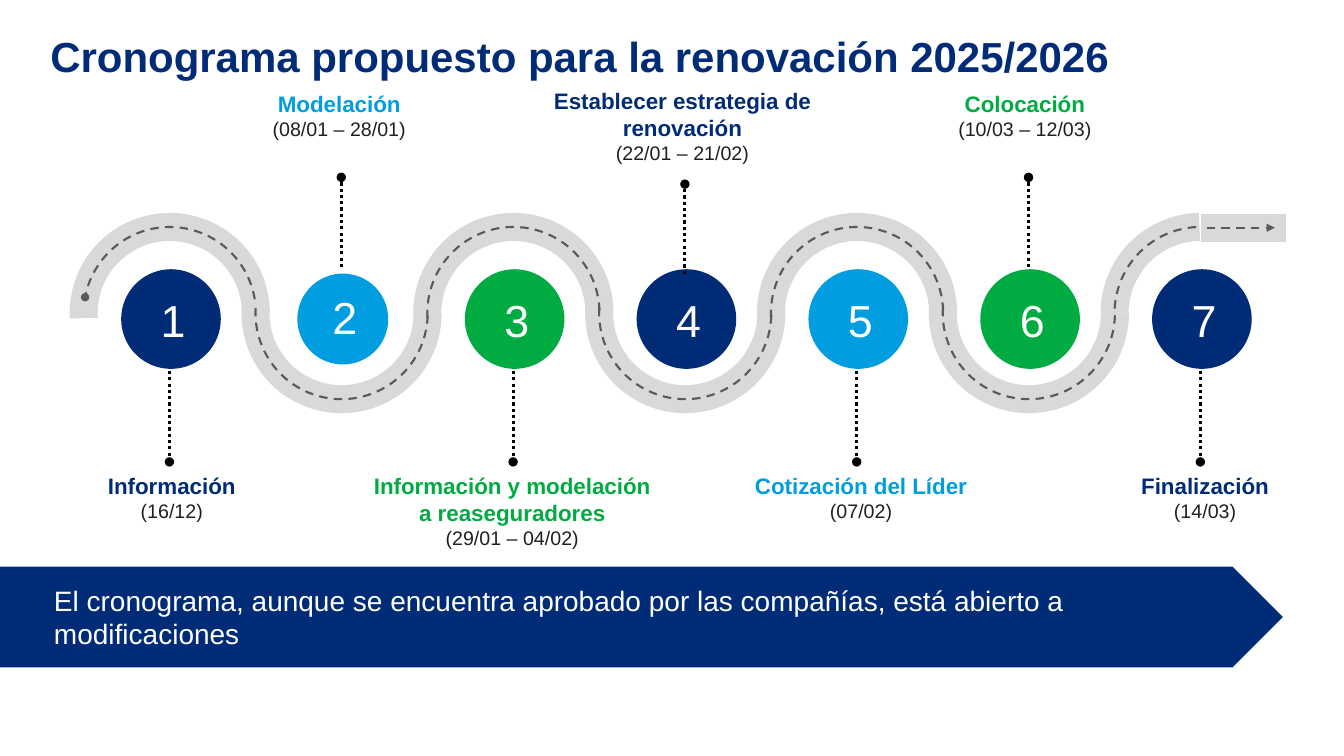
from dataclasses import dataclass

import pptx
import pptx.dml.color
import pptx.enum.dml
import pptx.enum.shapes
import pptx.enum.text
import pptx.oxml
import pptx.oxml.ns
import pptx.util

Cm = pptx.util.Cm
Pt = pptx.util.Pt
SHAPE = pptx.enum.shapes.MSO_SHAPE
DASH = pptx.enum.dml.MSO_LINE
ALIGN = pptx.enum.text.PP_ALIGN


@dataclass(frozen=True)
class Theme:
    font: str = "Arial"
    navy: str = "002C77"
    blue: str = "009DE0"
    green: str = "00AC41"
    ink: str = "202020"
    black: str = "000000"
    white: str = "FFFFFF"
    road: str = "D9D9D9"
    lane: str = "595959"
    title: int = 30
    number: int = 32
    banner: int = 20
    step: int = 16
    date: int = 14


T = Theme()
PITCH = 4.33     # distance between neighbouring steps
NODE = 2.51      # diameter of a numbered circle
INSETS = (0.25, 0.13, 0.25, 0.13)

# name, dates, colour, label width, label shift, circle diameter, downward shift
STEPS = [
    ("Información", "(16/12)", T.navy, 6.22, 0.02, NODE, 0),
    ("Modelación", "(08/01 – 28/01)", T.blue, 7.77, -0.09, 2.29, 0),
    ("Información y modelación a reaseguradores", "(29/01 – 04/02)",
     T.green, 7.67, -0.06, NODE, 0),
    ("Establecer estrategia de renovación", "(22/01 – 21/02)",
     T.navy, 7.77, -0.1, NODE, 0.17),
    ("Cotización del Líder", "(07/02)", T.blue, 6.83, 0.07, NODE, 0),
    ("Colocación", "(10/03 – 12/03)", T.green, 7.77, -0.13, NODE, 0),
    ("Finalización", "(14/03)", T.navy, 6.83, 0.08, NODE, 0),
]


def rgb(color):
    return pptx.dml.color.RGBColor.from_string(color)


def add_text(slide, box, lines, align=ALIGN.CENTER, insets=INSETS,
             spacing=None, wrap=True):
    """Write lines of (text, size, colour, bold), one paragraph each."""
    tf = slide.shapes.add_textbox(*map(Cm, box)).text_frame
    tf.word_wrap = wrap
    tf.margin_left, tf.margin_top, tf.margin_right, tf.margin_bottom = map(Cm, insets)
    for i, (text, size, color, bold) in enumerate(lines):
        p = tf.add_paragraph() if i else tf.paragraphs[0]
        p.alignment = align
        if spacing:
            p.line_spacing = spacing
        r = p.add_run()
        r.text = text
        r.font.name, r.font.size, r.font.bold = T.font, Pt(size), bold
        r.font.color.rgb = rgb(color)


def add_solid(slide, kind, box, color):
    sp = slide.shapes.add_shape(kind, *map(Cm, box))
    sp.shadow.inherit = False
    sp.fill.solid()
    sp.fill.fore_color.rgb = rgb(color)
    sp.line.fill.background()


def style_line(sp, color, width, dash=None, tail=None):
    sp.line.color.rgb = rgb(color)
    sp.line.width = Pt(width)
    if dash:
        sp.line.dash_style = dash
    if tail:
        end = pptx.oxml.parse_xml(
            f'<a:tailEnd {pptx.oxml.ns.nsdecls("a")} type="{tail}"/>')
        sp.line._get_or_add_ln().append(end)


def add_line(slide, start, end, *style):
    cx = slide.shapes.add_connector(
        pptx.enum.shapes.MSO_CONNECTOR.STRAIGHT, *map(Cm, start + end))
    style_line(cx, *style)
    cx._element.spPr.append(pptx.oxml.parse_xml(
        f'<a:effectLst {pptx.oxml.ns.nsdecls("a")}/>'))


def add_arc(slide, box, angles, flip, *style):
    """Draw an arc; angles are in 100000ths of the raw preset values."""
    sp = slide.shapes.add_shape(SHAPE.ARC, *map(Cm, box))
    sp.shadow.inherit = False
    sp.fill.background()
    sp.adjustments[0], sp.adjustments[1] = angles
    if flip:
        sp._element.spPr.get_or_add_xfrm().set(flip, "1")
    style_line(sp, *style)


def add_road(slide, box):
    """Draw the winding road, then the dashed lane along its middle."""
    left, top, width, size = box
    bends = len(STEPS) - 1
    exit_x = left + bends * PITCH + size / 2
    road = (T.road, 20)
    lane = (T.lane, 1.5, DASH.DASH)

    def bend(i):
        return left + i * PITCH, top, size, size

    for style in (road, lane):
        for i in range(bends):
            if i == 0 and style == lane:
                add_arc(slide, bend(i), (113.53, 209.65), "flipH", *lane, "oval")
            else:
                add_arc(slide, bend(i), (105.96, 0),
                        "flipV" if i % 2 else None, *style)
        if style == road:
            add_arc(slide, bend(bends), (162.48, 0), "flipH", *road)
            add_line(slide, (exit_x, top + 0.02), (left + width, top + 0.02), *road)
        else:
            add_arc(slide, bend(bends), (109.78, 161.11), None, *lane)
            add_line(slide, (exit_x + 0.15, top + 0.02),
                     (left + width - 0.28, top + 0.02), *lane, "triangle")


def add_step(slide, box, number, step):
    """Place a circle, its number, stem and label in one column."""
    left, top, width, height = box
    name, dates, color, label_w, shift, size, drop = step
    x, y = left + width / 2, top + height / 2
    above = number % 2 == 0
    add_solid(slide, SHAPE.OVAL, (x - size / 2, y - size / 2, size, size), color)
    ends = (y - 1.31 + drop, y - 3.57 + drop) if above else (y + 1.31, y + 3.6)
    stem_x = x - 0.04
    add_line(slide, (stem_x, ends[0]), (stem_x, ends[1]),
             T.black, 2.25, DASH.ROUND_DOT, "oval")
    number_y = y - 0.87 if size < NODE else y - 0.8
    add_text(slide, (x - 0.51, number_y, 1.02, 1.62),
             [(str(number), T.number, T.white, False)], wrap=False)
    label_y = top - drop / 3 if above else y + 3.72
    add_text(slide, (x + shift - label_w / 2, label_y, label_w, 1.55),
             [(name, T.step, color, True), (dates, T.date, T.ink, False)])


def add_timeline(slide, box):
    left, top, width, height = box
    add_road(slide, (left, top + 3.59, width, 4.34))
    for i, step in enumerate(STEPS):
        add_step(slide, (left + i * PITCH, top, 4.4, height), i + 1, step)


def add_banner(slide, box, text):
    left, top, width, height = box
    add_solid(slide, SHAPE.PENTAGON, box, T.navy)
    add_text(slide, (left + 1.36, top + 0.42, width - 4.64, height - 0.84),
             [(text, T.banner, T.white, False)], ALIGN.LEFT, (0, 0, 0, 0))


def main():
    prs = pptx.Presentation()
    prs.slide_width, prs.slide_height = Cm(33.87), Cm(19.05)
    slide = prs.slides.add_slide(prs.slide_layouts[6])
    add_text(slide, (1.27, 1.02, 31.27, 1.37),
             [("Cronograma propuesto para la renovación 2025/2026",
               T.title, T.navy, True)], ALIGN.LEFT, (0, 0, 0, 0), spacing=0.8)
    add_timeline(slide, (2.11, 2.13, 30.3, 11.82))
    add_banner(slide, (0, 14.28, 32.33, 2.54),
               "El cronograma, aunque se encuentra aprobado por las compañías, "
               "está abierto a modificaciones")
    prs.save("out.pptx")


if __name__ == "__main__":
    main()
